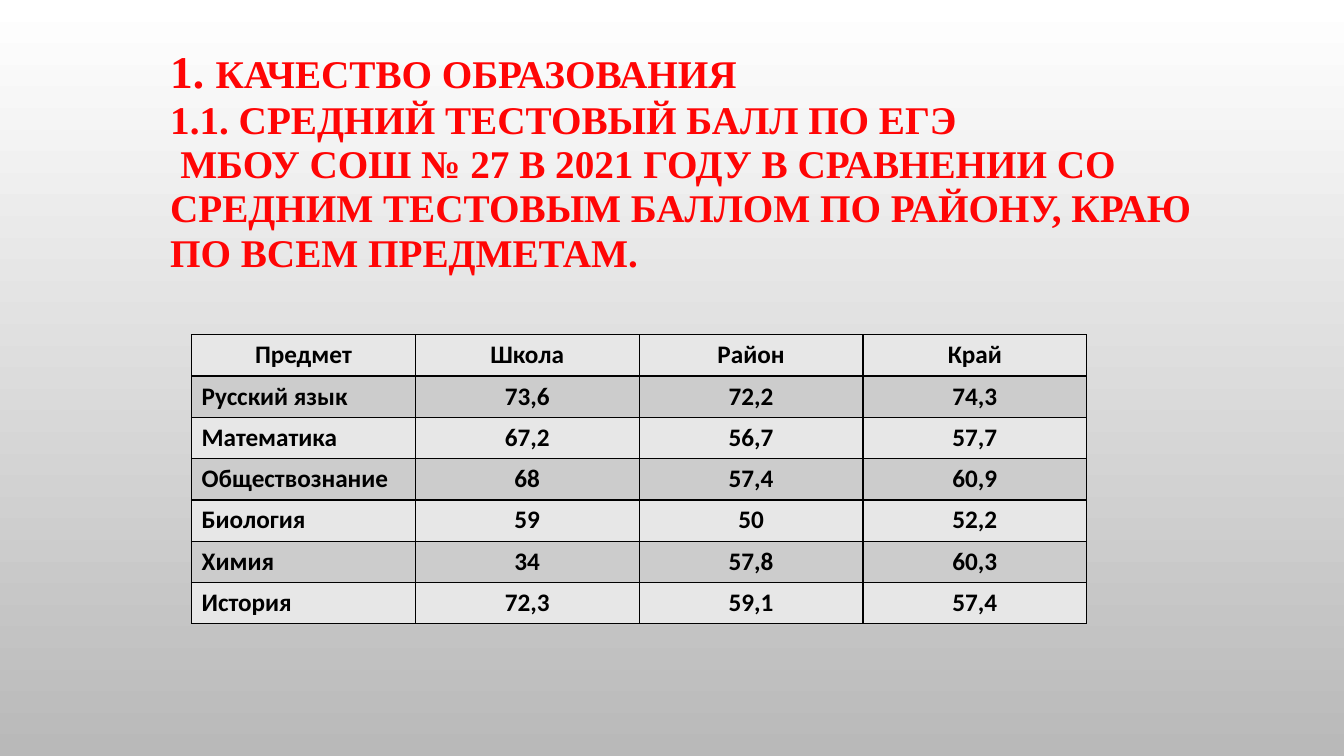
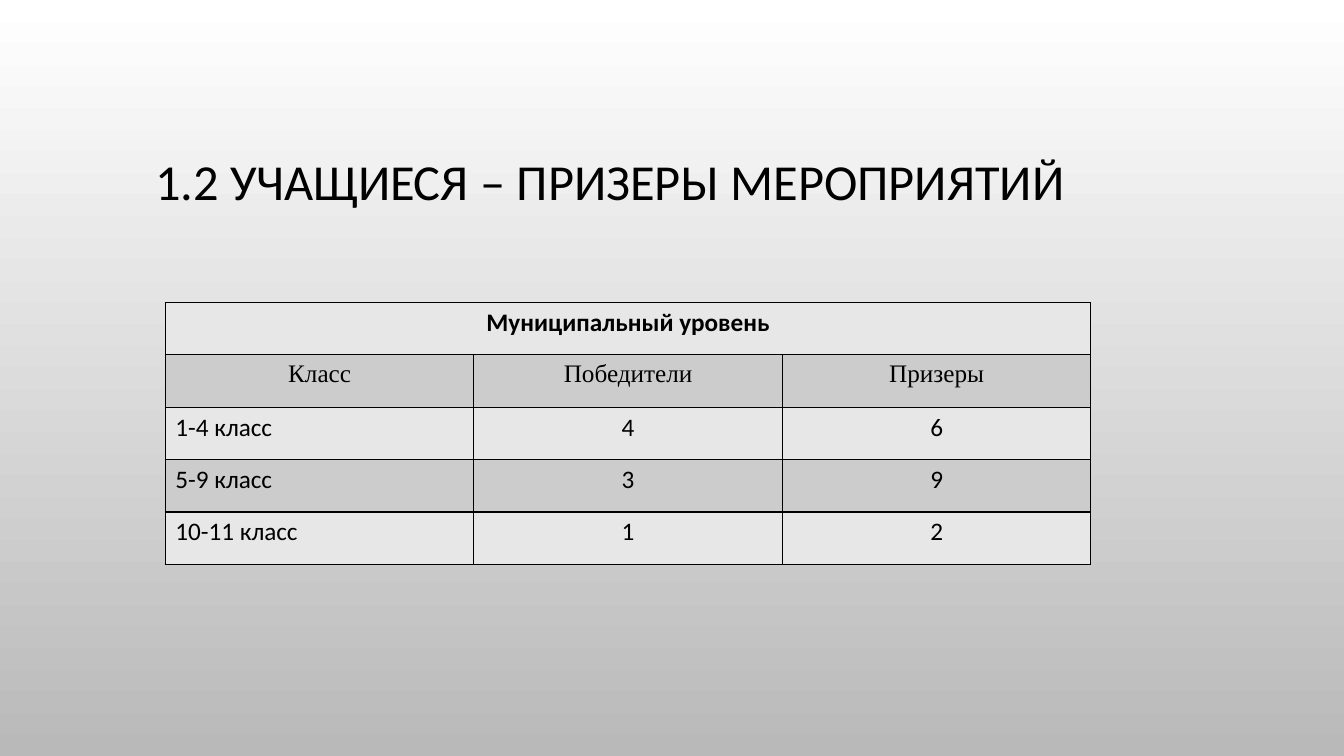
import pptx
import pptx.dml.color
import pptx.enum.text
import pptx.oxml
import pptx.oxml.ns
import pptx.util

Inches = pptx.util.Inches
Pt = pptx.util.Pt
RGBColor = pptx.dml.color.RGBColor
PP_ALIGN = pptx.enum.text.PP_ALIGN

WHITE = RGBColor(0xFF, 0xFF, 0xFF)
GREY = RGBColor(0xB9, 0xB9, 0xB9)
BLACK = RGBColor(0x00, 0x00, 0x00)
RED = RGBColor(0xFF, 0x05, 0x05)
BANDS = [RGBColor(0xE7, 0xE7, 0xE7), RGBColor(0xCC, 0xCC, 0xCC)]
SANS = "Calibri"
SERIF = "Times New Roman"


def add_title(slide, left, top, width, lines, font_name, size, color, bold, spacing):
    box = slide.shapes.add_textbox(left, top, width, Inches(1.75))
    frame = box.text_frame
    frame.word_wrap = True
    frame.vertical_anchor = pptx.enum.text.MSO_ANCHOR.MIDDLE
    for index, line in enumerate(lines):
        paragraph = frame.paragraphs[0] if index == 0 else frame.add_paragraph()
        paragraph.text = line
        paragraph.line_spacing = spacing
        paragraph.font.name = font_name
        paragraph.font.size = Pt(size)
        paragraph.font.color.rgb = color
        paragraph.font.bold = bold
    return frame


def add_banded_table(slide, left, top, column_width, row_height, rows, row_fonts):
    """Add a bordered table; row_fonts holds a (font name, bold) pair per row."""
    column_count = len(rows[-1])
    table = slide.shapes.add_table(
        len(rows), column_count, left, top,
        column_width * column_count, row_height * len(rows)).table
    for column in table.columns:
        column.width = column_width
    for r, (values, (font_name, bold)) in enumerate(zip(rows, row_fonts)):
        table.rows[r].height = row_height
        for c in range(column_count):
            cell = table.cell(r, c)
            properties = cell._tc.get_or_add_tcPr()
            for side in ("lnL", "lnR", "lnT", "lnB"):
                properties.append(pptx.oxml.parse_xml(
                    f'<a:{side} {pptx.oxml.ns.nsdecls("a")} w="{Pt(1)}">'
                    f'<a:solidFill><a:srgbClr val="{BLACK}"/></a:solidFill></a:{side}>'))
            cell.fill.solid()
            cell.fill.fore_color.rgb = BANDS[r % 2]
            if c >= len(values):
                continue
            cell.text = values[c]
            paragraph = cell.text_frame.paragraphs[0]
            is_row_label = c == 0 and values[-1][0].isdigit()
            paragraph.alignment = PP_ALIGN.LEFT if is_row_label else PP_ALIGN.CENTER
            paragraph.font.name = font_name
            paragraph.font.size = Pt(18)
            paragraph.font.bold = bold
            paragraph.font.color.rgb = BLACK
        if len(values) == 1:
            table.cell(r, 0).merge(table.cell(r, column_count - 1))


prs = pptx.Presentation()
prs.slide_width = Inches(13.33)
prs.slide_height = Inches(7.5)
blank = prs.slide_layouts[6]

background = prs.slide_master.background.fill
background.gradient()
background.gradient_angle = 270
for stop, color, position in zip(background.gradient_stops, (WHITE, GREY), (0, 1)):
    stop.color.rgb = color
    stop.position = position

# Slide 1: exam scores
scores_slide = prs.slides.add_slide(blank)
heading = add_title(
    scores_slide, Inches(1.59), Inches(0.73), Inches(10.74),
    ["1. ",
     "1.1. СРЕДНИЙ ТЕСТОВЫЙ БАЛЛ ПО ЕГЭ",
     "МБОУ СОШ № 27 В 2021 ГОДУ В СРАВНЕНИИ СО СРЕДНИМ ТЕСТОВЫМ БАЛЛОМ "
     "ПО РАЙОНУ, КРАЮ ПО ВСЕМ ПРЕДМЕТАМ."],
    SERIF, 28, RED, True, 0.94)
section, _, scope = heading.paragraphs
section.runs[0].font.size = Pt(32.4)
section.add_run().text = "КАЧЕСТВО ОБРАЗОВАНИЯ"
scope._p.get_or_add_pPr().set("indent", str(Inches(0.1)))

scores = [
    ("Предмет", "Школа", "Район", "Край"),
    ("Русский язык", "73,6", "72,2", "74,3"),
    ("Математика", "67,2", "56,7", "57,7"),
    ("Обществознание", "68", "57,4", "60,9"),
    ("Биология", "59", "50", "52,2"),
    ("Химия", "34", "57,8", "60,3"),
    ("История", "72,3", "59,1", "57,4"),
]
add_banded_table(scores_slide, Inches(1.9), Inches(3.32), Inches(2.22), Inches(0.41),
                 scores, [(SANS, True)] * len(scores))

# Slide 2: prize winners
winners_slide = prs.slides.add_slide(blank)
add_title(winners_slide, Inches(1.44), Inches(0.95), Inches(10.65),
          ["1.2 УЧАЩИЕСЯ – ПРИЗЕРЫ МЕРОПРИЯТИЙ"], SANS, 36, BLACK, False, 0.9)
winners = [
    ("Муниципальный уровень",),
    ("Класс", "Победители", "Призеры"),
    ("1-4 класс", "4", "6"),
    ("5-9 класс", "3", "9"),
    ("10-11 класс", "1", "2"),
]
add_banded_table(winners_slide, Inches(1.64), Inches(3), Inches(3.06), Inches(0.52),
                 winners, [(SANS, True), (SERIF, False)] + [(SANS, False)] * 3)

prs.save("out.pptx")
